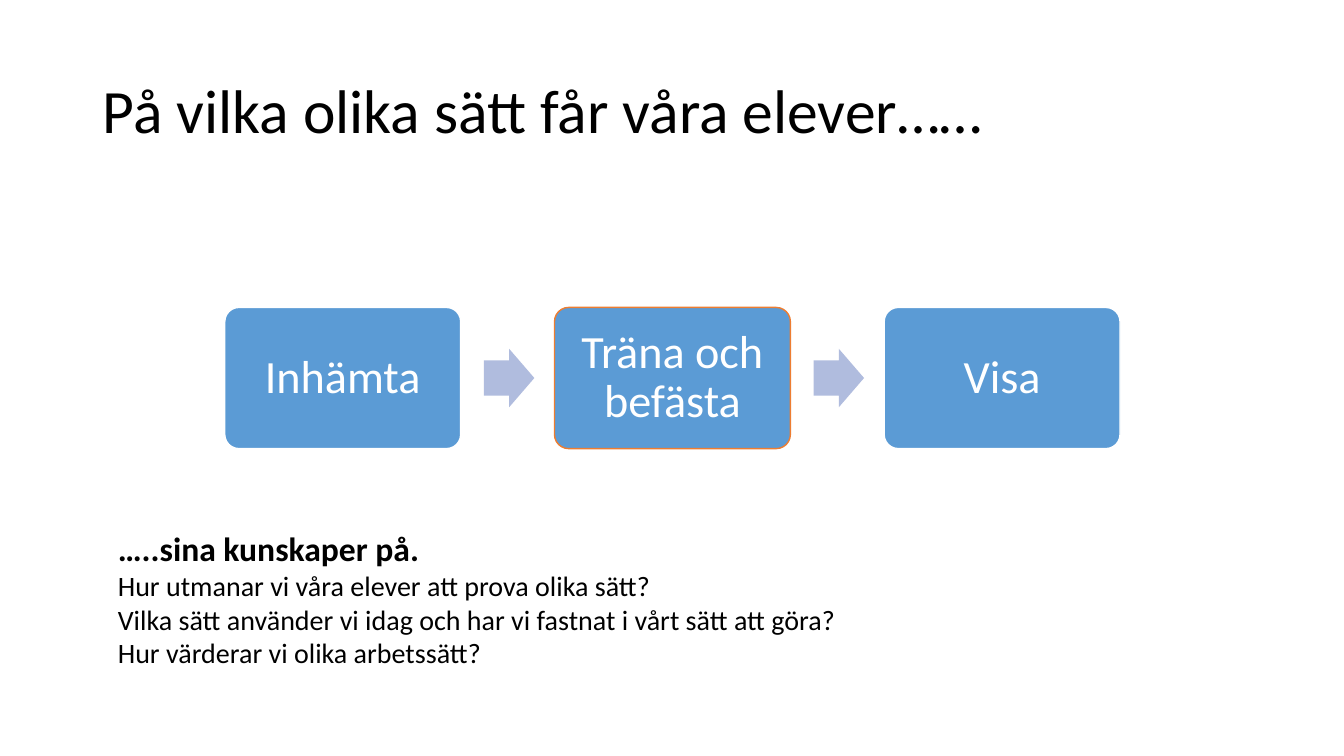
from pptx import Presentation
from pptx.dml.color import RGBColor
from pptx.enum.shapes import MSO_SHAPE
from pptx.enum.text import MSO_ANCHOR, PP_ALIGN
from pptx.util import Inches, Pt

ROUNDED = MSO_SHAPE.ROUNDED_RECTANGLE
ARROW = MSO_SHAPE.RIGHT_ARROW
MIDDLE, TOP = MSO_ANCHOR.MIDDLE, MSO_ANCHOR.TOP
LEFT, CENTER = PP_ALIGN.LEFT, PP_ALIGN.CENTER

BLACK = RGBColor(0x00, 0x00, 0x00)
WHITE = RGBColor(0xFF, 0xFF, 0xFF)
BLUE = RGBColor(0x5B, 0x9B, 0xD5)
LAVENDER = RGBColor(0xB0, 0xBC, 0xDE)
ORANGE = RGBColor(0xED, 0x7D, 0x31)

WIDTH, HEIGHT = 13.33, 7.5
TITLE_ONLY = 5

# Lengths below are percent of the slide's width or height.
TITLE_AREA = (6.9, 5.33, 86.27, 19.33)
QUESTION_AREA = (8.03, 69.2, 85.15, 20.13)
FLOW_MIDDLE = 50
FIRST_STEP, STEP_PITCH = 16.73, 24.53
STEP_WIDTH, STEP_HEIGHT = 17.55, 18.67
ARROW_OFFSET, ARROW_WIDTH, ARROW_HEIGHT = 19.28, 3.75, 7.73

STEPS = [("Inhämta", WHITE), ("Träna och befästa", ORANGE), ("Visa", WHITE)]
HEADING = "…..sina kunskaper på."
QUESTIONS = [
    "Hur utmanar vi våra elever att prova olika sätt?",
    "Vilka sätt använder vi idag och har vi fastnat i vårt sätt att göra?",
    "Hur värderar vi olika arbetssätt?",
]


def to_lengths(left, top, width, height):
    """Turn percent of the slide into slide lengths."""
    across, down = WIDTH / 100, HEIGHT / 100
    return [Inches(size) for size in (left * across, top * down, width * across, height * down)]


def write(para, text, size, color=BLACK, bold=False, align=LEFT, spacing=1.0):
    para.alignment = align
    para.line_spacing = spacing
    span = para.add_run()
    span.text = text
    span.font.name = "Calibri"
    span.font.size = Pt(size)
    span.font.bold = bold
    span.font.color.rgb = color


def set_frame(frame, anchor, side=0.1, edge=0.05):
    frame.word_wrap = True
    frame.vertical_anchor = anchor
    frame.margin_left = frame.margin_right = Inches(side)
    frame.margin_top = frame.margin_bottom = Inches(edge)


class FlowPage:
    def __init__(self, deck):
        self.page = deck.slides.add_slide(deck.slide_layouts[TITLE_ONLY])

    def title(self, text, area):
        box = self.page.shapes.title
        box.left, box.top, box.width, box.height = to_lengths(*area)
        set_frame(box.text_frame, MIDDLE)
        write(box.text_frame.paragraphs[0], text, 44, spacing=0.9)

    def shape(self, kind, left, width, height, fill, adjustments):
        """Add a filled shape centred vertically on the flow."""
        area = to_lengths(left, FLOW_MIDDLE - height / 2, width, height)
        shape = self.page.shapes.add_shape(kind, *area)
        shape.shadow.inherit = False
        shape.fill.solid()
        shape.fill.fore_color.rgb = fill
        shape.line.fill.background()
        for index, value in enumerate(adjustments):
            shape.adjustments[index] = value
        return shape

    def step(self, left, text, outline):
        box = self.shape(ROUNDED, left, STEP_WIDTH, STEP_HEIGHT, BLUE, [0.1])
        box.line.color.rgb = outline
        box.line.width = Pt(1)
        set_frame(box.text_frame, MIDDLE, side=0.14, edge=0.14)
        write(box.text_frame.paragraphs[0], text, 33, WHITE, align=CENTER, spacing=0.9)

    def arrow(self, left):
        self.shape(ARROW, left, ARROW_WIDTH, ARROW_HEIGHT, LAVENDER, [0.6, 0.5])

    def questions(self, heading, lines, area):
        frame = self.page.shapes.add_textbox(*to_lengths(*area)).text_frame
        set_frame(frame, TOP)
        write(frame.paragraphs[0], heading, 24, bold=True)
        for line in lines:
            write(frame.add_paragraph(), line, 20)


def main():
    deck = Presentation()
    deck.slide_width, deck.slide_height = Inches(WIDTH), Inches(HEIGHT)
    flow = FlowPage(deck)
    flow.title("På vilka olika sätt får våra elever……", TITLE_AREA)
    for index, (text, outline) in enumerate(STEPS):
        left = FIRST_STEP + index * STEP_PITCH
        flow.step(left, text, outline)
        if index < len(STEPS) - 1:
            flow.arrow(left + ARROW_OFFSET)
    flow.questions(HEADING, QUESTIONS, QUESTION_AREA)
    deck.save("out.pptx")


if __name__ == "__main__":
    main()
